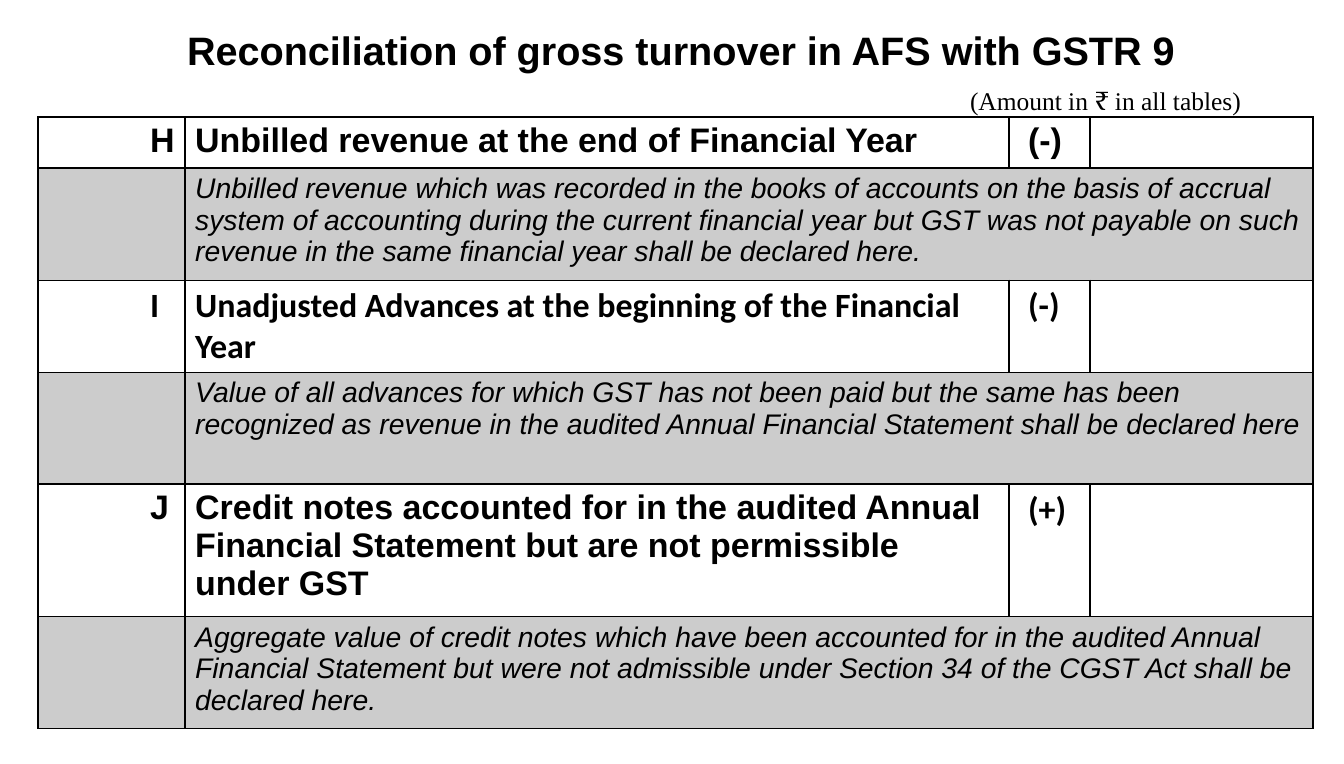
import pptx
import pptx.dml.color
import pptx.enum.text
import pptx.oxml
import pptx.util

COLORS = {"ink": "000000", "note": "CCCCCC", "plain": "FFFFFF"}
EMU_PER_PX = 8973.5
SLIDE_SIZE = (1344, 764)
ALIGN = pptx.enum.text.PP_ALIGN


def px(length):
    return pptx.util.Emu(round(length * EMU_PER_PX))


def rgb(name):
    return pptx.dml.color.RGBColor.from_string(COLORS[name])


class SlideBuilder:
    def __init__(self, presentation):
        self.slide = presentation.slides.add_slide(presentation.slide_layouts[6])

    def set_text(self, text_frame, text, size, font="Arial", bold=False,
                 italic=False, align=ALIGN.LEFT, indent=0):
        text_frame.text = text
        paragraph = text_frame.paragraphs[0]
        paragraph.alignment = align
        if indent:
            paragraph._p.get_or_add_pPr().set("marL", str(px(indent)))
        for run in paragraph.runs:
            run.font.name = font
            run.font.size = pptx.util.Pt(size)
            run.font.bold = bold
            run.font.italic = italic
            run.font.color.rgb = rgb("ink")

    def text(self, left, top, width, height, text, size, **style):
        shape = self.slide.shapes.add_textbox(px(left), px(top), px(width), px(height))
        shape.text_frame.word_wrap = True
        self.set_text(shape.text_frame, text, size, **style)

    def table(self, left, top, column_widths, row_heights):
        table = self.slide.shapes.add_table(
            len(row_heights), len(column_widths), px(left), px(top),
            px(sum(column_widths)), px(sum(row_heights))).table
        table.first_row = table.horz_banding = False
        for column, width in zip(table.columns, column_widths):
            column.width = px(width)
        for row, height in zip(table.rows, row_heights):
            row.height = px(height)
        return table

    def cell(self, cell, fill, bottom_line=1):
        cell.fill.solid()
        cell.fill.fore_color.rgb = rgb(fill)
        properties = cell._tc.get_or_add_tcPr()
        # Borders come before the fill in the cell properties
        for index, side in enumerate("LRTB"):
            width = pptx.util.Pt(bottom_line if side == "B" else 1)
            properties.insert(index, pptx.oxml.parse_xml(
                '<a:ln%s xmlns:a="http://schemas.openxmlformats.org/drawingml/2006/main"'
                ' w="%d"><a:solidFill><a:srgbClr val="%s"/></a:solidFill></a:ln%s>'
                % (side, width, COLORS["ink"], side)))


# Letter, heading, sign, note, heading font, sign font, letter font
ENTRIES = [
    ("H", "Unbilled revenue at the end of Financial Year", "(-)",
     "Unbilled revenue which was recorded in the books of accounts on the basis of "
     "accrual system of accounting during the current financial year but GST was not "
     "payable on such revenue in the same financial year shall be declared here.",
     "Arial", "Arial", "Arial"),
    ("I", "Unadjusted Advances at the beginning of the Financial Year", "(-)",
     "Value of all advances for which GST has not been paid but the same has been "
     "recognized as revenue in the audited Annual Financial Statement shall be "
     "declared here",
     "Calibri", "Calibri", "Calibri"),
    ("J", "Credit notes accounted for in the audited Annual Financial Statement but "
     "are not permissible under GST", "(+)",
     "Aggregate value of credit notes which have been accounted for in the audited "
     "Annual Financial Statement but were not admissible under Section 34 of the CGST "
     "Act shall be declared here.",
     "Arial", "Calibri", "Arial"),
]


def main():
    presentation = pptx.Presentation()
    presentation.slide_width, presentation.slide_height = map(px, SLIDE_SIZE)
    builder = SlideBuilder(presentation)

    # Title
    builder.text(65, 21, 1232, 58, "Reconciliation of gross turnover in AFS with GSTR 9",
                 28, bold=True, align=ALIGN.CENTER)

    # Reconciliation table: a heading row and a note row for each entry
    table = builder.table(38, 117, [147, 824, 81, 223], [51, 112, 92, 112, 132, 112])
    for index, entry in enumerate(ENTRIES):
        letter, heading, sign, note, heading_font, sign_font, letter_font = entry
        top, below = index * 2, index * 2 + 1
        for column in range(4):
            builder.cell(table.cell(top, column), "plain", 2 if index == 0 else 1)
            builder.cell(table.cell(below, column), "note")
        for column, text, font, indent in [(0, letter, letter_font, 102),
                                           (1, heading, heading_font, 0),
                                           (2, sign, sign_font, 9)]:
            builder.set_text(table.cell(top, column).text_frame, text, 24,
                             font=font, bold=True, indent=indent)
        table.cell(below, 1).merge(table.cell(below, 3))
        builder.set_text(table.cell(below, 1).text_frame, note, 20, italic=True)

    # Unit remark
    builder.text(960, 80, 329, 42, "(Amount in ₹ in all tables)", 18,
                 font="Times New Roman")

    presentation.save("out.pptx")


if __name__ == "__main__":
    main()
